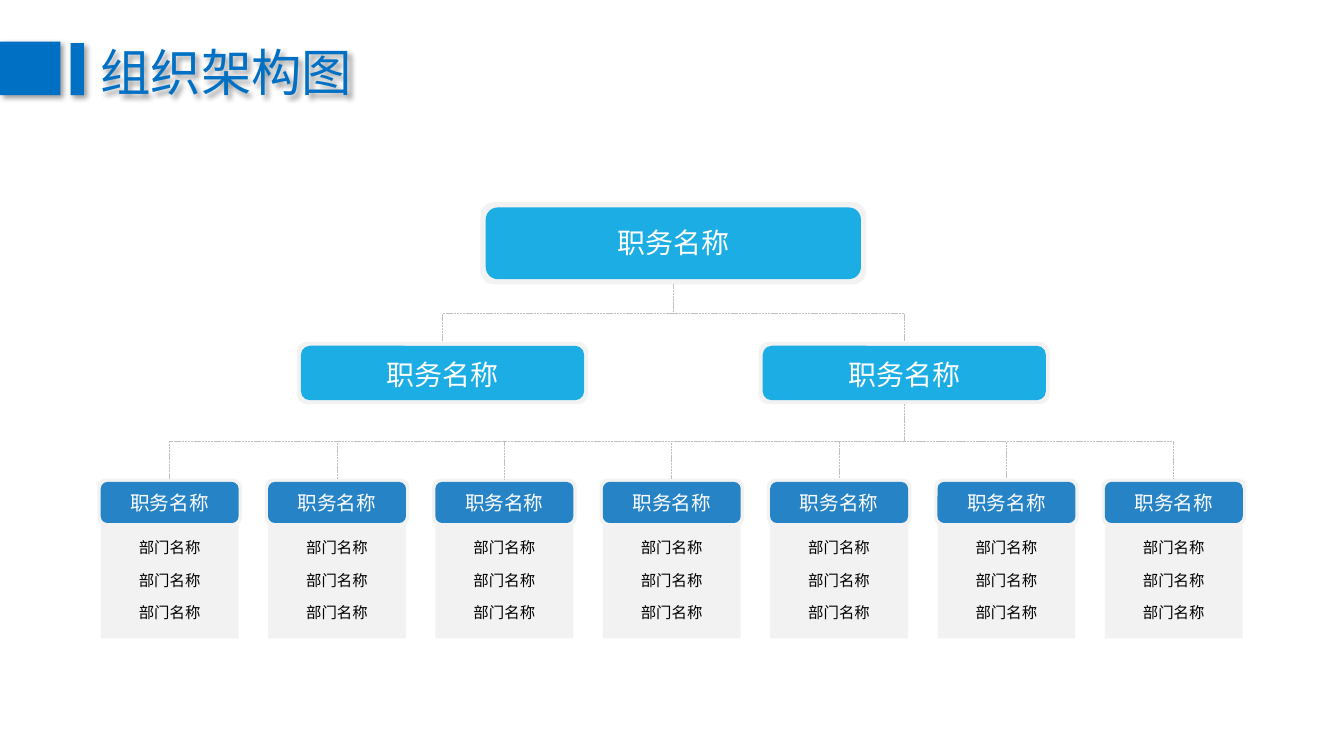
from lxml.etree import SubElement
from pptx import Presentation
from pptx.dml.color import RGBColor
from pptx.enum.dml import MSO_LINE
from pptx.enum.shapes import MSO_CONNECTOR, MSO_SHAPE
from pptx.enum.text import MSO_ANCHOR, MSO_AUTO_SIZE, PP_ALIGN
from pptx.oxml.ns import qn
from pptx.util import Pt

TITLE = "组织架构图"
CHIEF = "职务名称"
MANAGERS = ["职务名称"] * 2
UNITS = [("职务名称", ["部门名称"] * 3)] * 7

COLORS = {
    "title": "0070C4", "lead": "1CADE4", "unit": "2683C6", "pale": "F2F2F2",
    "line": "BFBFBF", "white": "FFFFFF", "black": "000000",
}
HEAD_FONT, BODY_FONT = "Noto Sans CJK SC", "Calibri"
ASIAN_FONT = "Noto Sans CJK SC"

# Card sizes per level; pad is the width of the pale rim, label_top is absolute
CHIEF_CARD = dict(top=148.2, width=268, height=51.2, pad=3.8, color="lead",
                  size=20, label_top=157.7)
MANAGER_CARD = dict(top=247, width=202.3, height=38.9, pad=2.8, color="lead",
                    size=20, label_top=252)
UNIT_CARD = dict(top=344.2, width=98.5, height=29.4, pad=2.3, color="unit",
                 size=14, label_top=347)
CHIEF_CENTER = 481
MANAGER_STEP = 329.8
UNIT_FIRST, UNIT_STEP = 121.2, 119.54
PANEL_TOP, PANEL_HEIGHT = 373.7, 82.4
DEPARTMENT_TOP, DEPARTMENT_STEP, DEPARTMENT_SIZE = 380.8, 23.3, 11
BARS = [(0, 29.8, 43.2, 38.2), (50.4, 30.8, 9.6, 37.2)]


def rgb(name):
    return RGBColor.from_string(COLORS[name])


def add_block(page, kind, left, top, width, height, color):
    block = page.shapes.add_shape(kind, Pt(left), Pt(top), Pt(width), Pt(height))
    block.shadow.inherit = False
    block.fill.solid()
    block.fill.fore_color.rgb = rgb(color)
    block.line.fill.background()
    return block


def add_shadow(shape):
    """Give a shape a soft grey shadow to the lower right."""
    shape.shadow.inherit = False
    effects = shape.element.spPr.find(qn("a:effectLst"))
    shadow = SubElement(effects, qn("a:outerShdw"), blurRad=str(Pt(4)),
                        dist=str(Pt(3)), dir="2700000", algn="tl", rotWithShape="0")
    black = SubElement(shadow, qn("a:srgbClr"), val=COLORS["black"])
    SubElement(black, qn("a:alpha"), val="40000")


def write(box, text, size, font, color, align):
    frame = box.text_frame
    frame.word_wrap = False
    frame.auto_size = MSO_AUTO_SIZE.NONE
    frame.vertical_anchor = MSO_ANCHOR.TOP
    frame.text = text
    para = frame.paragraphs[0]
    para.alignment = align
    para.font.size = Pt(size)
    para.font.color.rgb = rgb(color)
    para.font.name = font
    defaults = para._p.pPr.find(qn("a:defRPr"))
    SubElement(defaults, qn("a:ea"), typeface=ASIAN_FONT)


def add_label(page, text, center, top, size, font, color):
    width, height = len(text) * size + 15, size * 1.2 + 7.5
    box = page.shapes.add_textbox(Pt(center - width / 2), Pt(top), Pt(width), Pt(height))
    write(box, text, size, font, color, PP_ALIGN.CENTER)


def add_card(page, text, center, top, width, height, pad, color, size, label_top):
    """Draw a rimmed card with its label and return the rim."""
    left = center - width / 2
    rim = add_block(page, MSO_SHAPE.ROUNDED_RECTANGLE, left - pad, top - pad,
                    width + 2 * pad, height + 2 * pad, "pale")
    add_block(page, MSO_SHAPE.ROUNDED_RECTANGLE, left, top, width, height, color)
    add_label(page, text, center, label_top, size, HEAD_FONT, "white")
    return rim


def add_unit(page, name, departments, center):
    rim = add_card(page, name, center, **UNIT_CARD)
    width = UNIT_CARD["width"]
    add_block(page, MSO_SHAPE.RECTANGLE, center - width / 2, PANEL_TOP,
              width, PANEL_HEIGHT, "pale")
    for row, department in enumerate(departments):
        add_label(page, department, center, DEPARTMENT_TOP + row * DEPARTMENT_STEP,
                  DEPARTMENT_SIZE, BODY_FONT, "black")
    return rim


def join(page, parent, child):
    """Run a dashed elbow from the parent's bottom down to the child's top."""
    start_x, start_y = parent.left + parent.width // 2, parent.top + parent.height
    end_x, end_y = child.left + child.width // 2, child.top
    elbow = page.shapes.add_connector(MSO_CONNECTOR.ELBOW, start_x, start_y, end_x, end_y)
    elbow.begin_connect(parent, 2)
    elbow.end_connect(child, 0)
    # A vertical elbow is a horizontal one turned by a quarter about its centre
    elbow.width, elbow.height = end_y - start_y, abs(end_x - start_x)
    elbow.left = (start_x + end_x - elbow.width) // 2
    elbow.top = (start_y + end_y - elbow.height) // 2
    properties = elbow.element.spPr
    frame = properties.find(qn("a:xfrm"))
    frame.attrib.clear()
    if end_x < start_x:
        frame.set("rot", "5400000")
    else:
        frame.set("rot", "16200000")
        frame.set("flipH", "1")
    elbow.line.color.rgb = rgb("line")
    elbow.line.width = Pt(0.5)
    elbow.line.dash_style = MSO_LINE.SQUARE_DOT
    SubElement(properties, qn("a:effectLst"))


def main():
    deck = Presentation()
    deck.slide_width, deck.slide_height = Pt(960), Pt(540)
    page = deck.slides.add_slide(deck.slide_layouts[5])

    title = page.shapes.title
    title.left, title.top, title.width, title.height = Pt(64.4), Pt(26), Pt(196), Pt(51)
    write(title, TITLE, 36, HEAD_FONT, "title", PP_ALIGN.LEFT)
    add_shadow(title)
    for bar in BARS:
        add_shadow(add_block(page, MSO_SHAPE.RECTANGLE, *bar, "title"))

    chief = add_card(page, CHIEF, CHIEF_CENTER, **CHIEF_CARD)
    first_manager = CHIEF_CENTER - MANAGER_STEP * (len(MANAGERS) - 1) / 2
    managers = [add_card(page, name, first_manager + i * MANAGER_STEP, **MANAGER_CARD)
                for i, name in enumerate(MANAGERS)]
    units = [add_unit(page, name, departments, UNIT_FIRST + i * UNIT_STEP)
             for i, (name, departments) in enumerate(UNITS)]

    for unit in units:
        join(page, managers[-1], unit)
    for manager in managers:
        join(page, chief, manager)
    deck.save("out.pptx")


if __name__ == "__main__":
    main()
